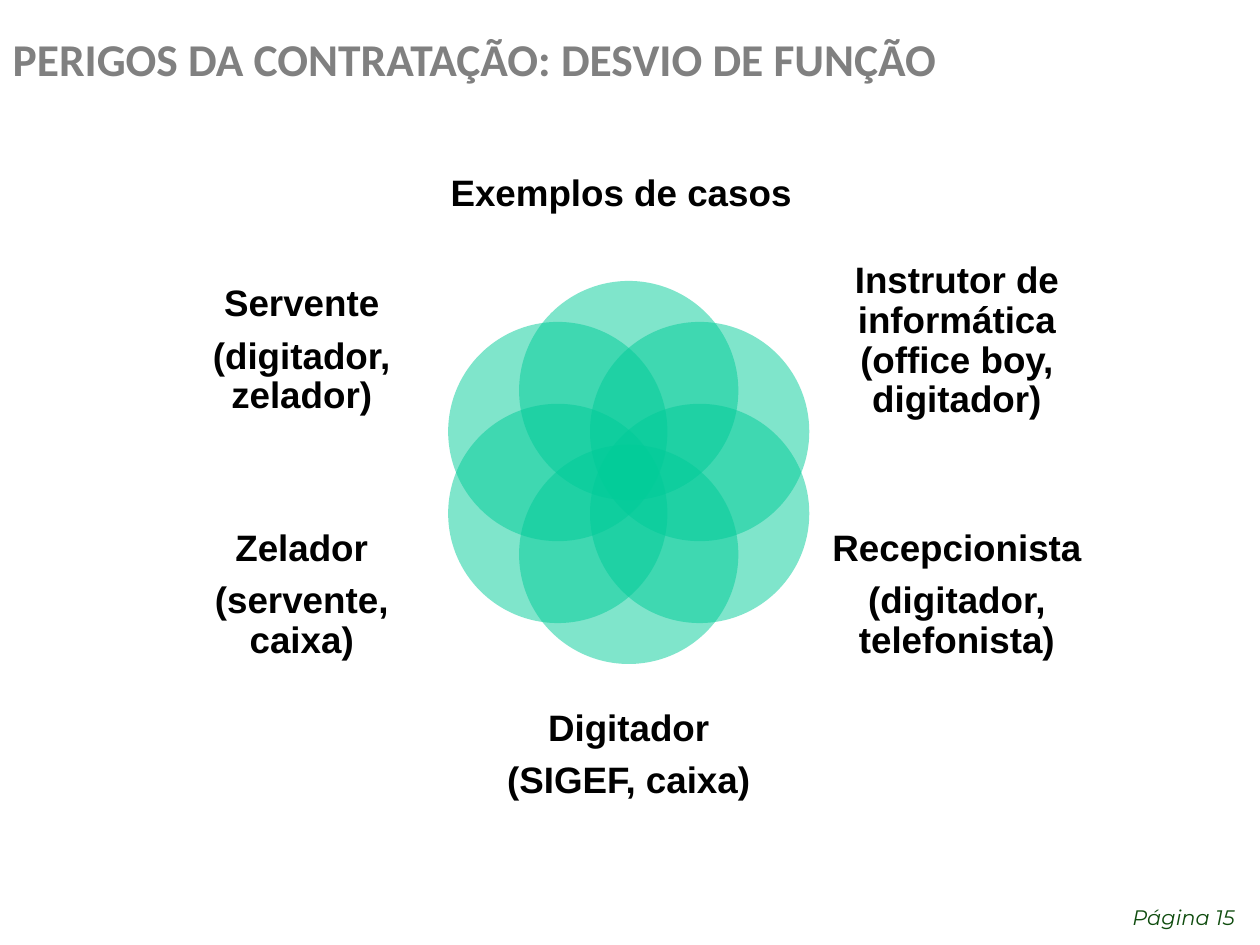
from dataclasses import dataclass
from math import cos, radians, sin

from lxml.etree import SubElement
from pptx import Presentation
from pptx.dml.color import RGBColor
from pptx.enum.shapes import MSO_SHAPE
from pptx.enum.text import MSO_ANCHOR, MSO_AUTO_SIZE, PP_ALIGN
from pptx.oxml.ns import qn
from pptx.util import Inches, Pt


@dataclass(frozen=True)
class Style:
    font: str
    size: float
    color: str
    bold: bool = False
    italic: bool = False


@dataclass(frozen=True)
class Theme:
    petal: str = "00CC99"
    petal_alpha: int = 50
    title: Style = Style("Calibri", 26, "808080", bold=True)
    label: Style = Style("Arial", 21, "000000", bold=True)
    page: Style = Style("Montserrat", 12, "0F4C0E", italic=True)


@dataclass(frozen=True)
class Label:
    box: tuple[float, float, float, float]
    lines: tuple[str, ...]


THEME = Theme()

# Petal ring: centre, distance of each petal from it, and petal diameter
CENTER_X, CENTER_Y = 4.99, 3.75
RING, DIAMETER = 0.65, 1.74

# Label columns and rows around the ring
LEFT, RIGHT, SIDE_W = 1.36, 6.56, 2.07
UPPER, LOWER, SIDE_H = 2.06, 4.0, 1.45

# Clockwise from the top, one label for each petal
LABELS = (
    Label((0.86, 0.95, 8.14, 1.19), ("Exemplos de casos",)),
    Label((RIGHT, UPPER, SIDE_W, 1.3),
          ("Instrutor de informática (office boy, digitador)",)),
    Label((RIGHT, LOWER, SIDE_W, SIDE_H),
          ("Recepcionista", "(digitador, telefonista)")),
    Label((3.9, 5.4, 2.18, 1.19), ("Digitador", "(SIGEF, caixa)")),
    Label((LEFT, LOWER, SIDE_W, SIDE_H), ("Zelador", "(servente, caixa)")),
    Label((LEFT, UPPER, SIDE_W, SIDE_H), ("Servente", "(digitador, zelador)")),
)


def add_run(p, text: str, style: Style) -> None:
    r = p.add_run()
    r.text = text
    r.font.name = style.font
    r.font.size = Pt(style.size)
    r.font.bold = style.bold
    r.font.italic = style.italic
    r.font.color.rgb = RGBColor.from_string(style.color)


def add_petal(s, angle: float) -> None:
    """Draw a translucent circle, with the angle clockwise from the top."""
    x = CENTER_X + RING * sin(radians(angle)) - DIAMETER / 2
    y = CENTER_Y - RING * cos(radians(angle)) - DIAMETER / 2
    sp = s.shapes.add_shape(MSO_SHAPE.OVAL, Inches(x), Inches(y),
                            Inches(DIAMETER), Inches(DIAMETER))
    sp.shadow.inherit = False
    sp.line.fill.background()
    sp.fill.solid()
    sp.fill.fore_color.rgb = RGBColor.from_string(THEME.petal)
    color = sp.fill._xPr.find(qn("a:solidFill"))[0]
    SubElement(color, qn("a:alpha"), val=str(THEME.petal_alpha * 1000))


def add_label(s, label: Label) -> None:
    tf = s.shapes.add_textbox(*map(Inches, label.box)).text_frame
    tf.word_wrap = True
    tf.vertical_anchor = MSO_ANCHOR.MIDDLE
    tf.margin_left = tf.margin_right = tf.margin_top = tf.margin_bottom = 0
    for i, line in enumerate(label.lines):
        p = tf.add_paragraph() if i else tf.paragraphs[0]
        p.alignment = PP_ALIGN.CENTER
        p.line_spacing = 0.9
        p.space_after = Pt(0.35 * THEME.label.size)
        add_run(p, line, THEME.label)


def add_title(s, text: str) -> None:
    sp = s.shapes.title
    sp.left, sp.top, sp.width, sp.height = map(Inches, (0, 0.13, 8.08, 0.67))
    tf = sp.text_frame
    tf.auto_size = MSO_AUTO_SIZE.NONE
    tf.vertical_anchor = MSO_ANCHOR.MIDDLE
    p = tf.paragraphs[0]
    p.alignment = PP_ALIGN.LEFT
    p.space_before = Pt(0)
    add_run(p, text, THEME.title)


def add_page_number(s, text: str) -> None:
    tf = s.shapes.add_textbox(*map(Inches, (8.33, 7.09, 1.57, 0.32))).text_frame
    tf.word_wrap = True
    p = tf.paragraphs[0]
    p.alignment = PP_ALIGN.RIGHT
    p.line_spacing = 1.2
    add_run(p, text, THEME.page)


def main() -> None:
    prs = Presentation()
    prs.slide_width, prs.slide_height = Inches(10), Inches(7.5)
    s = prs.slides.add_slide(prs.slide_layouts[5])

    add_title(s, "PERIGOS DA CONTRATAÇÃO: DESVIO DE FUNÇÃO")

    # Petals with their labels
    for i, label in enumerate(LABELS):
        add_petal(s, i * 360 / len(LABELS))
        add_label(s, label)

    add_page_number(s, "Página 15")
    prs.save("out.pptx")


if __name__ == "__main__":
    main()
